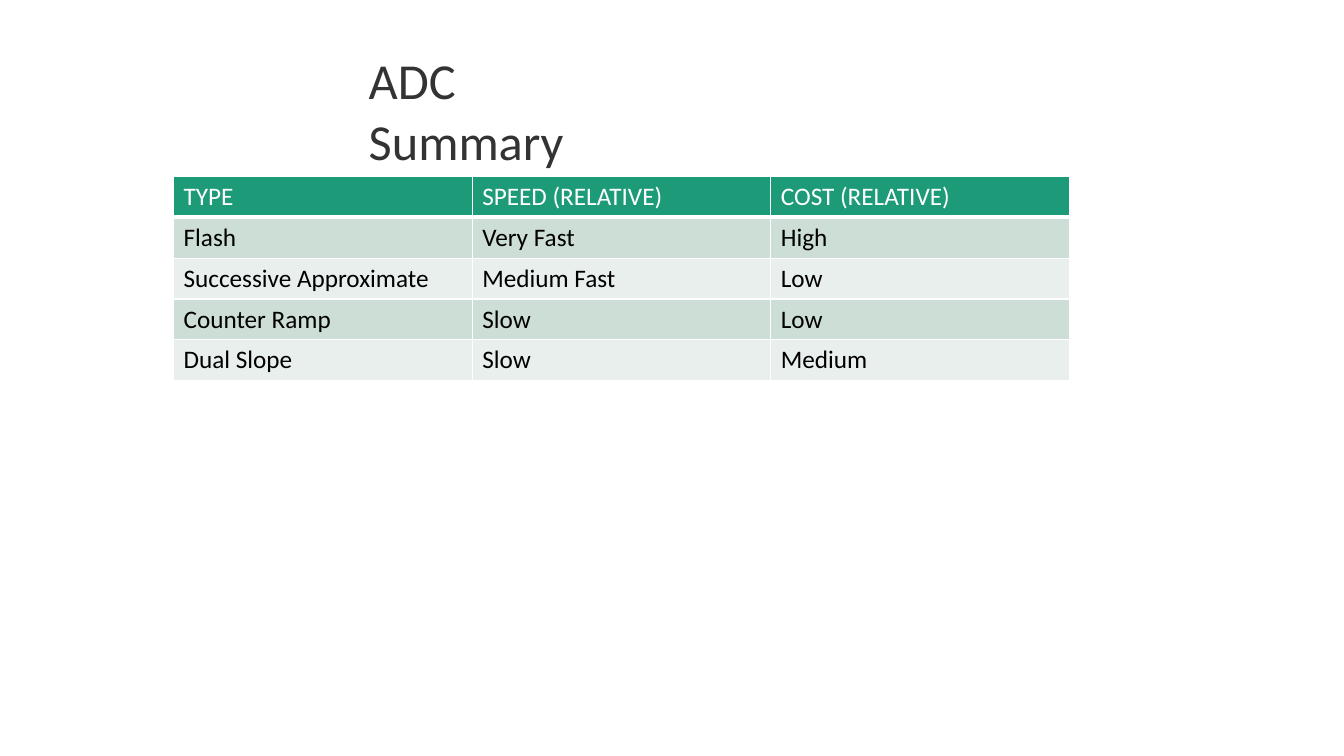
from collections import namedtuple
from dataclasses import dataclass

from lxml.etree import SubElement
from pptx import Presentation
from pptx.dml.color import RGBColor
from pptx.oxml.ns import qn
from pptx.util import Pt

Box = namedtuple("Box", "left top width height")


@dataclass(frozen=True)
class Theme:
    font: str = "Calibri"
    title_size: int = 36
    table_size: int = 18
    title_ink: str = "333333"
    header_ink: str = "FFFFFF"
    body_ink: str = "000000"
    header_fill: str = "1D9A78"
    band_fills: tuple = ("CDDED6", "E8EFEC")
    border: str = "FFFFFF"
    border_width: int = 1
    header_rule_width: int = 3


THEME = Theme()

ADC_ROWS = [
    ("TYPE", "SPEED (RELATIVE)", "COST (RELATIVE)"),
    ("Flash", "Very Fast", "High"),
    ("Successive Approximate", "Medium Fast", "Low"),
    ("Counter Ramp", "Slow", "Low"),
    ("Dual Slope", "Slow", "Medium"),
]


def style_text(paragraph, size, ink):
    paragraph.font.name = THEME.font
    paragraph.font.size = Pt(size)
    paragraph.font.color.rgb = RGBColor.from_string(ink)


def add_title(slide, box, wording):
    title = slide.shapes.add_textbox(*map(Pt, box)).text_frame
    title.word_wrap = True
    title.margin_right = Pt(20)
    title.text = wording
    style_text(title.paragraphs[0], THEME.title_size, THEME.title_ink)


def set_borders(cell, top, bottom):
    properties = cell._tc.get_or_add_tcPr()
    widths = {"L": THEME.border_width, "R": THEME.border_width, "T": top, "B": bottom}
    for position, (side, width) in enumerate(widths.items()):
        line = properties.makeelement(qn(f"a:ln{side}"), {"w": str(Pt(width))})
        fill = SubElement(line, qn("a:solidFill"))
        SubElement(fill, qn("a:srgbClr"), val=THEME.border)
        properties.insert(position, line)


def add_comparison(slide, box, rows):
    comparison = slide.shapes.add_table(len(rows), len(rows[0]), *map(Pt, box)).table
    for column in comparison.columns:
        column.width = Pt(box.width / len(rows[0]))
    for r, entries in enumerate(rows):
        comparison.rows[r].height = Pt(box.height / len(rows))
        fill = THEME.band_fills[(r - 1) % 2] if r else THEME.header_fill
        ink = THEME.body_ink if r else THEME.header_ink
        top = THEME.header_rule_width if r == 1 else THEME.border_width
        bottom = THEME.border_width if r else THEME.header_rule_width
        for c, entry in enumerate(entries):
            cell = comparison.cell(r, c)
            cell.text = entry
            cell.fill.solid()
            cell.fill.fore_color.rgb = RGBColor.from_string(fill)
            style_text(cell.text_frame.paragraphs[0], THEME.table_size, ink)
            cell.text_frame.paragraphs[0].font.bold = False
            set_borders(cell, top, bottom)


def main():
    deck = Presentation()
    deck.slide_width, deck.slide_height = Pt(960), Pt(540)
    slide = deck.slides.add_slide(deck.slide_layouts[6])
    add_comparison(slide, Box(124, 126, 640, 146), ADC_ROWS)
    add_title(slide, Box(256.3, 31.7, 223.2, 51), "ADC Summary")
    deck.save("out.pptx")


if __name__ == "__main__":
    main()
